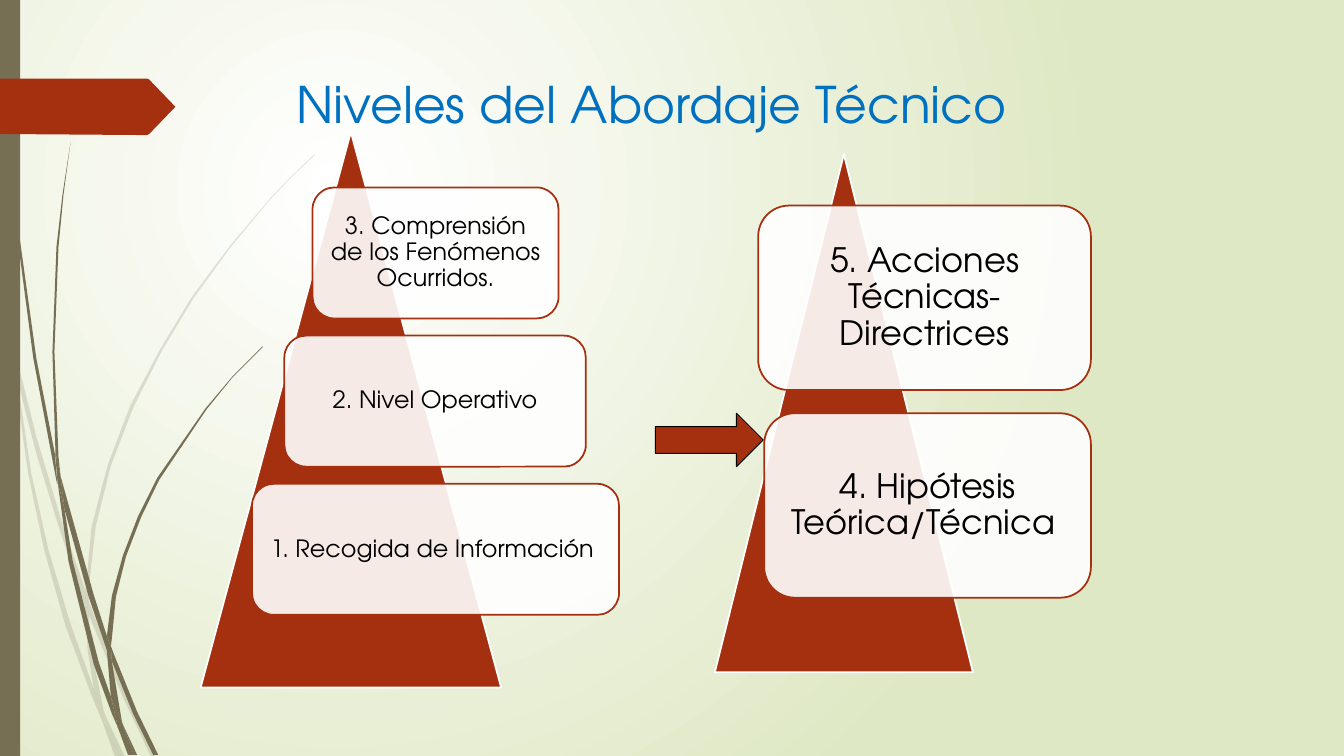
from lxml import etree
from pptx import Presentation
from pptx.dml.color import RGBColor
from pptx.enum.shapes import MSO_SHAPE
from pptx.enum.text import MSO_ANCHOR, PP_ALIGN
from pptx.oxml.ns import qn
from pptx.util import Inches, Pt

WHITE = RGBColor(0xFF, 0xFF, 0xFF)
BLACK = RGBColor(0x00, 0x00, 0x00)
RUST = RGBColor(0xA5, 0x30, 0x10)
OLIVE = RGBColor(0x76, 0x6F, 0x54)
PALE_GREEN = RGBColor(0xDF, 0xE8, 0xC4)
BLUE = RGBColor(0x00, 0x70, 0xC0)
FONT = "TeX Gyre Adventor"

BACK_BLADES = [
    [(0.11, 3.5), (0.09, 3.22), (0, 2.82), (0, 2.99), (0.1, 3.44)],
    [(0.58, 5.22), (0.84, 5.99), (0.85, 5.86), (0.62, 5.2), (0.36, 4.33), (0.14, 3.45),
     (0.17, 3.76), (0.36, 4.5)],
    [(0.92, 6.07), (0.88, 5.96), (0.88, 6.1), (1.23, 6.94), (1.5, 7.51), (1.55, 7.51),
     (1.27, 6.92)],
    [(1.19, 7.51), (1.24, 7.51), (1.05, 7.11)],
    [(0.93, 6.83), (0.7, 6.19), (0.48, 5.45), (0.31, 4.69), (0.17, 3.76), (0.11, 3.5),
     (0.28, 4.7), (0.44, 5.46), (0.65, 6.21), (0.92, 6.93), (1.01, 7.14), (0.99, 7.07)],
    [(0.84, 5.99), (0.87, 6.46), (0.93, 6.83), (0.96, 6.92), (1.05, 7.11), (1.03, 7.06),
     (0.91, 6.46), (0.88, 6.1), (0.88, 6.08)],
    [(0.88, 5.84), (0.95, 5.22), (1.1, 4.62), (1.32, 4.05), (1.6, 3.49), (1.92, 2.96),
     (2.29, 2.45), (2.68, 1.98), (2.9, 1.75), (3.12, 1.54), (3.12, 1.53), (2.89, 1.75),
     (2.68, 1.97), (2.28, 2.44), (1.9, 2.95), (1.58, 3.48), (1.29, 4.03), (1.07, 4.61),
     (0.91, 5.22), (0.85, 5.84), (0.85, 5.86), (0.88, 5.96)],
    [(1.01, 7.14), (1.14, 7.51), (1.19, 7.51)],
    [(0.88, 6.08), (0.88, 6.1), (0.88, 5.96), (0.85, 5.86), (0.84, 5.99)],
    [(0.96, 6.92), (0.93, 6.83), (0.99, 7.07), (1.01, 7.14), (1.19, 7.51), (1.05, 7.11)],
]
FRONT_BLADES = [
    [(0.07, 1.1), (0.17, 2.33), (0.33, 3.55), (0.56, 4.77), (0.57, 4.81), (0.55, 4.57),
     (0.55, 4.53), (0.36, 3.55), (0.19, 2.32), (0.08, 1.09), (0.05, 0.48), (0.04, 0),
     (0.03, 0), (0.04, 0.48)],
    [(0.88, 5.92), (1.06, 6.45), (1.06, 6.33), (1.06, 6.31), (0.93, 5.9), (0.6, 4.72),
     (0.64, 5.05)],
    [(1.13, 6.49), (1.1, 6.41), (1.11, 6.56), (1.32, 7.08), (1.52, 7.49), (1.57, 7.49),
     (1.36, 7.06)],
    [(1.1, 6.91), (0.98, 6.57), (0.72, 5.56), (0.64, 5.05), (0.57, 4.77), (0.68, 5.57),
     (0.93, 6.59), (1.11, 7.08), (1.17, 7.22), (1.16, 7.17)],
    [(0.6, 4.72), (0.58, 4.53), (0.54, 3.49), (0.58, 2.45), (0.63, 1.93), (0.7, 1.41),
     (0.62, 1.93), (0.56, 2.45), (0.52, 3.49), (0.55, 4.49)],
    [(1.33, 7.49), (1.36, 7.49), (1.22, 7.19)],
    [(0.57, 4.77), (0.64, 5.05), (0.6, 4.72), (0.55, 4.49), (0.55, 4.53)],
    [(1.11, 6.33), (1.15, 5.92), (1.25, 5.52), (1.4, 5.13), (1.58, 4.76), (2.05, 4.06),
     (2.31, 3.74), (2.61, 3.44), (2.6, 3.44), (2.31, 3.73), (2.04, 4.05), (1.56, 4.74),
     (1.37, 5.12), (1.22, 5.51), (1.11, 5.91), (1.06, 6.31), (1.1, 6.41)],
    [(1.17, 7.22), (1.27, 7.49), (1.31, 7.49)],
    [(1.06, 6.45), (1.1, 6.91), (1.16, 7.06), (1.22, 7.19), (1.21, 7.16), (1.11, 6.56),
     (1.09, 6.51)],
    [(1.06, 6.45), (1.09, 6.51), (1.11, 6.56), (1.1, 6.41), (1.06, 6.31), (1.06, 6.33)],
    [(1.16, 7.06), (1.1, 6.91), (1.16, 7.17), (1.17, 7.22), (1.3, 7.49), (1.33, 7.49),
     (1.22, 7.19)],
]
TAB = [(1.74, 1.06), (1.48, 1.33), (1.46, 1.34), (1.36, 1.34), (0, 1.33), (0, 0.78),
       (1.46, 0.78), (1.48, 0.79)]


def set_all(target, values):
    for name, value in values.items():
        setattr(target, name, value)


def paint(shape, color, opacity=100, line=None, line_width=1.25):
    shape.shadow.inherit = False
    shape.fill.solid()
    shape.fill.fore_color.rgb = color
    if opacity < 100:
        tint = shape.fill._xPr.find(qn("a:solidFill"))[0]
        etree.SubElement(tint, qn("a:alpha"), val=str(opacity * 1000))
    if line is None:
        shape.line.fill.background()
    else:
        shape.line.color.rgb = line
        shape.line.width = Pt(line_width)


def add_preset(slide, preset, box, **look):
    paint(slide.shapes.add_shape(preset, *map(Inches, box)), **look)


def add_outline(slide, origin, points, **look):
    left, top = origin
    corners = [(Inches(left + x), Inches(top + y)) for x, y in points]
    builder = slide.shapes.build_freeform(*corners[0])
    builder.add_line_segments(corners[1:], close=True)
    paint(builder.convert_to_shape(), **look)


def add_text(slide, box, text, size, color, **layout):
    frame = slide.shapes.add_textbox(*map(Inches, box)).text_frame
    set_all(frame, {"word_wrap": True, **layout})
    paragraph = frame.paragraphs[0]
    run = paragraph.add_run()
    run.text = text
    set_all(run.font, {"name": FONT, "size": Pt(size)})
    run.font.color.rgb = color
    return paragraph


def add_backdrop(slide):
    fill = slide.background.fill
    fill.gradient()
    for stop, color, position in zip(fill.gradient_stops, (WHITE, PALE_GREEN), (0, 1)):
        stop.color.rgb = color
        stop.position = position
    gradient = slide.background._cSld.find(".//" + qn("a:gradFill"))
    gradient.remove(gradient.find(qn("a:lin")))
    circle = etree.Element(qn("a:path"), path="circle")
    etree.SubElement(circle, qn("a:fillToRect"), l="50000", t="50000", r="100000", b="100000")
    gradient.find(qn("a:gsLst")).addnext(circle)


def add_margin(slide, box):
    left, top, width, height = box
    for blades, opacity in ((BACK_BLADES, 20), (FRONT_BLADES, 100)):
        for blade in blades:
            add_outline(slide, (left, top), blade, color=OLIVE, opacity=opacity)
    add_preset(slide, MSO_SHAPE.RECTANGLE, (left, top, width, height), color=OLIVE)
    add_outline(slide, (left, top), TAB, color=RUST)


def add_level(slide, box, text, size, inset):
    left, top, width, height = box
    add_preset(slide, MSO_SHAPE.ROUNDED_RECTANGLE, box, color=WHITE, opacity=90, line=RUST)
    pad = height / 20
    margins = {f"margin_{side}": Inches(inset) for side in ("left", "top", "right", "bottom")}
    caption = add_text(slide, (left + pad, top + pad, width - 2 * pad, height - 2 * pad),
                       text, size, BLACK, vertical_anchor=MSO_ANCHOR.MIDDLE, **margins)
    set_all(caption, {"alignment": PP_ALIGN.CENTER, "line_spacing": 0.9})


def add_pyramid(slide, box, first_drop, pitch, level_height, size, inset, levels):
    left, top, _, _ = box
    add_preset(slide, MSO_SHAPE.ISOSCELES_TRIANGLE, box, color=RUST, line=WHITE)
    for index, (text, indent, width) in enumerate(levels):
        level_top = top + first_drop + index * pitch
        add_level(slide, (left + indent, level_top, width, level_height), text, size, inset)


def main():
    deck = Presentation()
    set_all(deck, {"slide_width": Inches(13.33), "slide_height": Inches(7.5)})
    slide = deck.slides.add_slide(deck.slide_layouts[6])
    add_backdrop(slide)
    add_margin(slide, (0, 0, 0.2, 7.5))
    add_text(slide, (2.84, 0.68, 9.75, 1.4), "Niveles del Abordaje Técnico", 36, BLUE)
    add_pyramid(slide, (1.99, 1.31, 2.98, 5.51), 0.55, 1.47, 1.3, 17, 0.07, [
        ("3. Comprensión de los Fenómenos Ocurridos.", 1.11, 2.44),
        ("2. Nivel Operativo", 0.83, 2.99),
        ("1. Recogida de Información ", 0.51, 3.64),
    ])
    add_preset(slide, MSO_SHAPE.RIGHT_ARROW, (6.5, 4.1, 1.07, 0.53),
               color=RUST, line=BLACK, line_width=0.75)
    add_pyramid(slide, (7.09, 1.53, 2.56, 5.14), 0.51, 2.06, 1.83, 24, 0.1, [
        ("5. Acciones Técnicas- Directrices", 0.43, 3.3),
        ("4. Hipótesis Teórica/Técnica ", 0.49, 3.24),
    ])
    deck.save("out.pptx")


if __name__ == "__main__":
    main()
